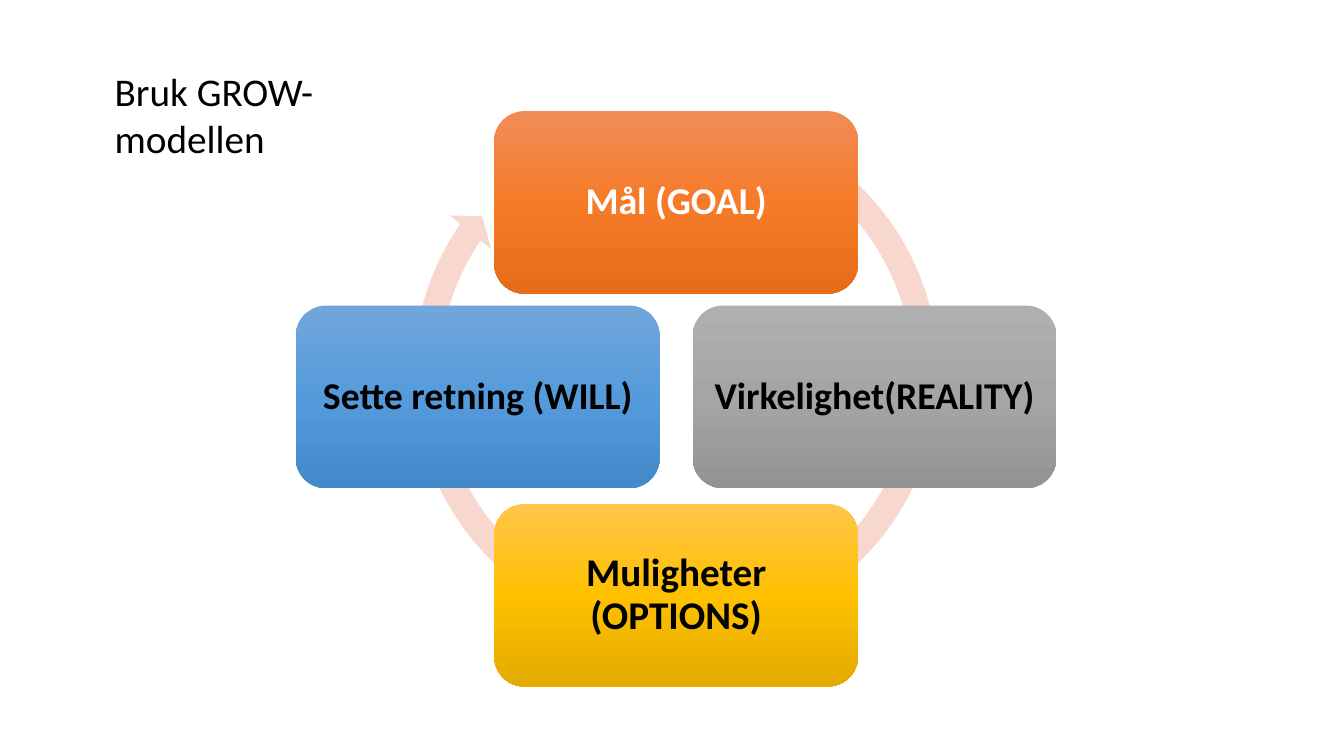
from copy import deepcopy

from pptx import Presentation
from pptx import util as u
from pptx.dml.color import RGBColor
from pptx.enum import shapes, text
from pptx.oxml.ns import qn

BLACK = RGBColor(0x00, 0x00, 0x00)
WHITE = RGBColor(0xFF, 0xFF, 0xFF)
PALE_ORANGE = RGBColor(0xF8, 0xD7, 0xCE)
# Gradient colours from top to bottom
ORANGE = (RGBColor(0xF1, 0x8C, 0x57), RGBColor(0xF6, 0x7B, 0x28), RGBColor(0xE5, 0x6C, 0x19))
GREY = (RGBColor(0xAF, 0xAF, 0xAF), RGBColor(0xA5, 0xA5, 0xA5), RGBColor(0x93, 0x93, 0x93))
YELLOW = (RGBColor(0xFF, 0xC6, 0x4B), RGBColor(0xFF, 0xC0, 0x00), RGBColor(0xE3, 0xAB, 0x00))
BLUE = (RGBColor(0x71, 0xA6, 0xDB), RGBColor(0x55, 0x9B, 0xDB), RGBColor(0x44, 0x8A, 0xCA))

# Cycle geometry in centimetres
CENTRE_X, CENTRE_Y = 17.04, 10.0
BOX_WIDTH, BOX_HEIGHT = 9.17, 4.6


class GrowPage:
    font = "Calibri"

    def __init__(self, deck):
        self.page = deck.slides.add_slide(deck.slide_layouts[5])

    def set_text(self, shape, words, size, color, bold, align, anchor, margins):
        frame = shape.text_frame
        frame.text = words
        frame.word_wrap = True
        frame.auto_size = text.MSO_AUTO_SIZE.NONE
        frame.vertical_anchor = anchor
        frame.margin_left = frame.margin_right = u.Cm(margins[0])
        frame.margin_top = frame.margin_bottom = u.Cm(margins[1])
        para = frame.paragraphs[0]
        para.alignment = align
        span = para.runs[0]
        span.font.name = self.font
        span.font.size = u.Pt(size)
        span.font.bold = bold
        span.font.color.rgb = color
        return para

    def title(self, words, left, top, width, height):
        title = self.page.shapes.title
        title.left, title.top = u.Cm(left), u.Cm(top)
        title.width, title.height = u.Cm(width), u.Cm(height)
        self.set_text(title, words, 28, BLACK, False, text.PP_ALIGN.LEFT,
                      text.MSO_ANCHOR.TOP, (0.25, 0.13))

    def shape(self, kind, x, y, width, height):
        """Add an unlined shape centred on x, y."""
        shape = self.page.shapes.add_shape(
            kind, u.Cm(x - width / 2), u.Cm(y - height / 2), u.Cm(width), u.Cm(height))
        shape.shadow.inherit = False
        shape.line.fill.background()
        return shape

    def cycle_arrow(self, x, y, size):
        arrow = self.shape(shapes.MSO_SHAPE.CIRCULAR_ARROW, x, y, size, size)
        arrow.fill.solid()
        arrow.fill.fore_color.rgb = PALE_ORANGE
        for index, value in enumerate((0.047, 2.729, 128.727, 180.027, 0.048)):
            arrow.adjustments[index] = value

    def step(self, words, x, y, colors, size, color):
        box = self.shape(shapes.MSO_SHAPE.ROUNDED_RECTANGLE, x, y, BOX_WIDTH, BOX_HEIGHT)
        box.fill.gradient()
        box.fill.gradient_angle = 270
        # A new gradient has two stops; add the third
        stops = box._element.spPr.find(qn("a:gradFill")).find(qn("a:gsLst"))
        stops.append(deepcopy(stops[-1]))
        for index, stop in enumerate(box.fill.gradient_stops):
            stop.color.rgb = colors[index]
            stop.position = index / 2
        para = self.set_text(box, words, size, color, True, text.PP_ALIGN.CENTER,
                             text.MSO_ANCHOR.MIDDLE, (0.27, 0.27))
        para.line_spacing = 0.9


def main():
    deck = Presentation()
    deck.slide_width, deck.slide_height = u.Cm(33.87), u.Cm(19.05)
    grow = GrowPage(deck)

    # Heading
    grow.title("Bruk GROW-modellen", 2.64, 1.57, 8.56, 2.67)

    # Cycle, clockwise from the top: offset from the centre, colours, text
    grow.cycle_arrow(CENTRE_X, 9.42, 13.92)
    steps = (
        ("Mål (GOAL)", 0, -4.9, ORANGE, 27, WHITE),
        ("Virkelighet(REALITY)", 5, 0, GREY, 27, BLACK),
        ("Muligheter (OPTIONS)", 0, 5, YELLOW, 28, BLACK),
        ("Sette retning (WILL)", -5, 0, BLUE, 27, BLACK),
    )
    for words, dx, dy, colors, size, color in steps:
        grow.step(words, CENTRE_X + dx, CENTRE_Y + dy, colors, size, color)

    deck.save("out.pptx")


if __name__ == "__main__":
    main()
